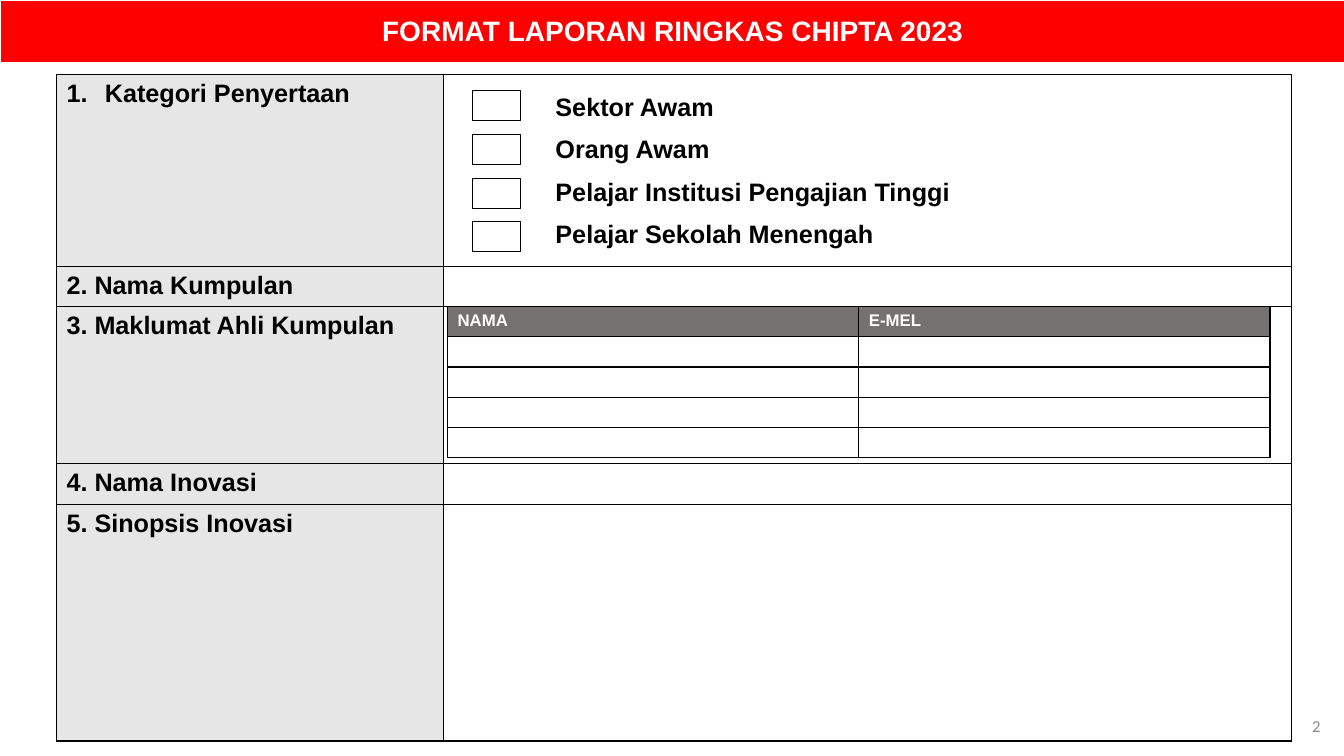
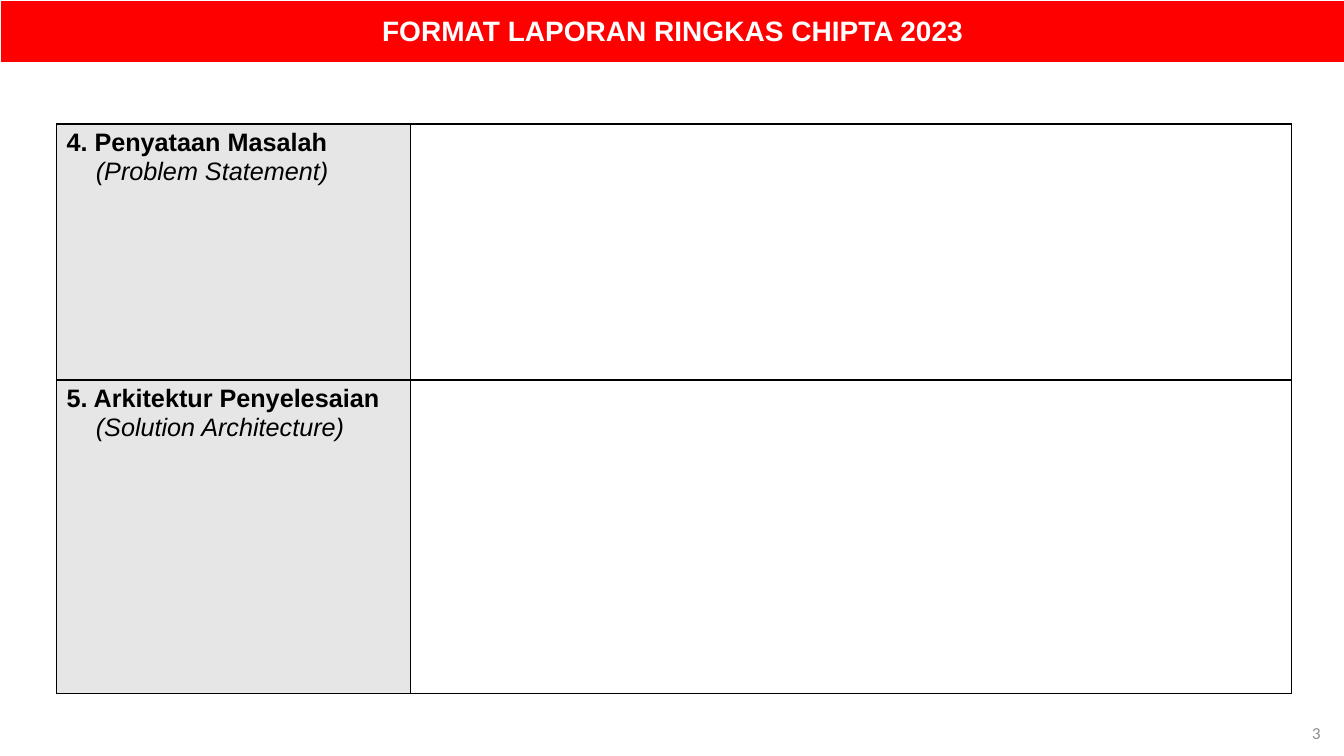
"""Build the two-slide short report form for CHIPTA 2023."""
import lxml.etree
import pptx
import pptx.dml.color
import pptx.enum.shapes
import pptx.enum.text
import pptx.oxml.ns
import pptx.util

COLORS = {
    "band": "FF0000",
    "label": "E7E6E6",
    "member_head": "767171",
    "white": "FFFFFF",
    "black": "000000",
    "number": "8C8C8C",
}
ALIGN = pptx.enum.text.PP_ALIGN
MIDDLE = pptx.enum.text.MSO_ANCHOR.MIDDLE
qn = pptx.oxml.ns.qn

report = pptx.Presentation()
report.slide_width = pptx.util.Inches(13.33)
report.slide_height = pptx.util.Inches(7.5)
COL = report.slide_width / 100
ROW = report.slide_height / 100


def write(paragraph, text, size=18, font="Arial", color="black", bold=True, italic=False,
          align=None, left=0, indent=0, spacing=None, numbered=False):
    """Add one formatted run, or set the type size of an empty paragraph."""
    if not text:
        end = lxml.etree.SubElement(paragraph._p, qn("a:endParaRPr"), sz=str(size * 100))
        lxml.etree.SubElement(end, qn("a:latin"), typeface=font)
        return
    run = paragraph.add_run()
    run.text = text
    run.font.size = pptx.util.Pt(size)
    run.font.name = font
    run.font.bold = bold
    run.font.italic = italic
    run.font.color.rgb = pptx.dml.color.RGBColor.from_string(COLORS[color])
    if align is not None:
        paragraph.alignment = align
    if spacing:
        paragraph.line_spacing = spacing
    if left:
        properties = paragraph._p.get_or_add_pPr()
        properties.set("marL", str(int(left * COL)))
        properties.set("indent", str(int(indent * COL)))
        if numbered:
            lxml.etree.SubElement(properties, qn("a:buAutoNum"), type="arabicPeriod")


def add_grid(slide, left, top, columns, rows, fill_of, border="black", bottom=1):
    """Add a bordered table whose cell fills come from fill_of(row, column)."""
    grid = slide.shapes.add_table(
        len(rows), len(columns), int(left * COL), int(top * ROW),
        int(sum(columns) * COL), int(sum(rows) * ROW)).table
    grid.first_row = grid.horz_banding = False
    for column, width in zip(grid.columns, columns):
        column.width = int(width * COL)
    for r, height in enumerate(rows):
        grid.rows[r].height = int(height * ROW)
        for c in range(len(columns)):
            cell = grid.cell(r, c)
            properties = cell._tc.get_or_add_tcPr()
            for side, weight in (("L", 1), ("R", 1), ("T", 1), ("B", bottom)):
                line = lxml.etree.SubElement(
                    properties, qn("a:ln" + side), w=str(pptx.util.Pt(weight)))
                paint = lxml.etree.SubElement(line, qn("a:solidFill"))
                lxml.etree.SubElement(paint, qn("a:srgbClr"), val=COLORS[border])
            fill = fill_of(r, c)
            if fill:
                cell.fill.solid()
                cell.fill.fore_color.rgb = pptx.dml.color.RGBColor.from_string(COLORS[fill])
            else:
                cell.fill.background()
    return grid


form_slides = []
for number, number_top in (("2", 93.33), ("3", 94.27)):
    slide = report.slides.add_slide(report.slide_layouts[6])
    form_slides.append(slide)
    banner = add_grid(slide, 0, 0, [100.1], [8.4], lambda r, c: "band", "white", 3).cell(0, 0)
    banner.vertical_anchor = MIDDLE
    write(banner.text_frame.paragraphs[0], "FORMAT LAPORAN RINGKAS CHIPTA 2023",
          size=20, color="white", align=ALIGN.CENTER)
    page = slide.shapes.add_textbox(
        int(76.5 * COL), int(number_top * ROW), int(22.5 * COL), int(5.33 * ROW)).text_frame
    page.word_wrap = True
    page.vertical_anchor = MIDDLE
    write(page.paragraphs[0], number, size=12, font="Calibri", color="number",
          bold=False, align=ALIGN.RIGHT)

entry_slide, solution_slide = form_slides

entry = add_grid(entry_slide, 4.2, 9.87, [28.8, 63.1], [23.87, 5.2, 20.8, 5.2, 31.33],
                 lambda r, c: "label" if c == 0 else None)
write(entry.cell(0, 0).text_frame.paragraphs[0], "Kategori Penyertaan",
      left=2.85, indent=-2.85, numbered=True)
labels = ["2. Nama Kumpulan", "3. Maklumat Ahli Kumpulan", "4. Nama Inovasi",
          "5. Sinopsis Inovasi"]
for r, label in enumerate(labels, start=1):
    write(entry.cell(r, 0).text_frame.paragraphs[0], label)
    write(entry.cell(r, 1).text_frame.paragraphs[0], "")

categories = ["Sektor Awam", "Orang Awam", "Pelajar Institusi Pengajian Tinggi",
              "Pelajar Sekolah Menengah"]
choices = entry.cell(0, 1).text_frame
for i, category in enumerate(categories):
    choice = choices.add_paragraph() if i else choices.paragraphs[0]
    write(choice, category, left=7.58, spacing=1.5)
    checkbox = entry_slide.shapes.add_shape(
        pptx.enum.shapes.MSO_SHAPE.RECTANGLE, int(35.18 * COL), int((12 + 5.78 * i) * ROW),
        int(3.53 * COL), int(4 * ROW))
    checkbox.shadow.inherit = False
    checkbox.fill.background()
    checkbox.line.width = pptx.util.Pt(0.75)
    checkbox.line.color.rgb = pptx.dml.color.RGBColor.from_string(COLORS["black"])

members = add_grid(entry_slide, 33.3, 40.53, [30.6] * 2, [3.84] * 5,
                   lambda r, c: "white" if r else "member_head")
for c, heading in enumerate(["NAMA", "E-MEL"]):
    write(members.cell(0, c).text_frame.paragraphs[0], heading, size=12, color="white")
    for r in range(1, 5):
        write(members.cell(r, c).text_frame.paragraphs[0], "", size=12)

solution = add_grid(solution_slide, 4.2, 16.4, [26.33, 65.57], [33.87, 41.47],
                    lambda r, c: "label" if c == 0 else None)
problem = solution.cell(0, 0).text_frame.paragraphs[0]
write(problem, "4. Penyataan Masalah ", left=2.18, indent=-2.18)
write(problem, "(Problem Statement)", bold=False, italic=True)
architecture = solution.cell(1, 0).text_frame
write(architecture.paragraphs[0], "5. Arkitektur Penyelesaian", left=2.18, indent=-2.18)
write(architecture.add_paragraph(), "(Solution Architecture)", bold=False, italic=True,
      left=1.5, indent=0.68)

report.save("out.pptx")
